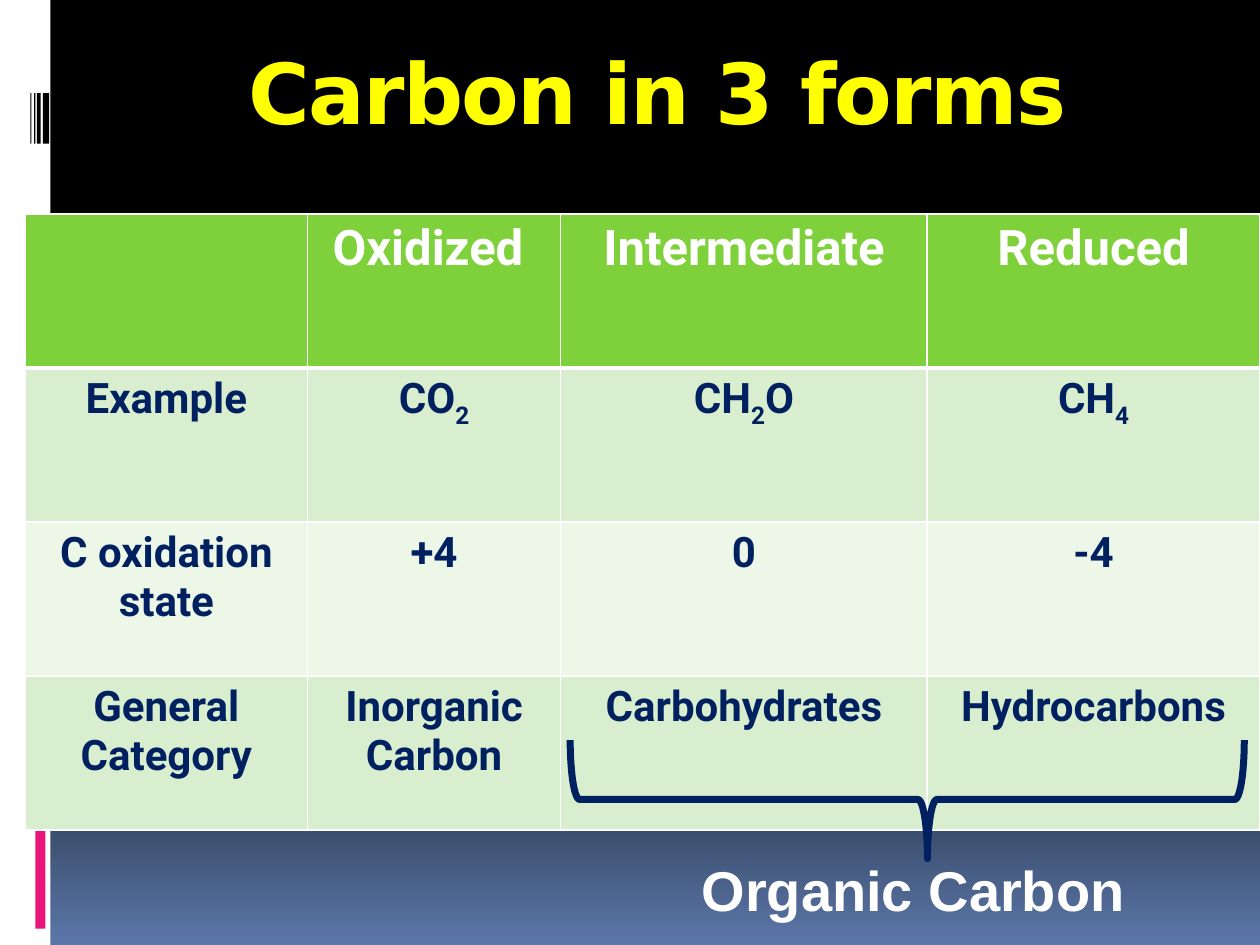
from copy import deepcopy

from lxml import etree
from pptx import Presentation
from pptx.dml.color import RGBColor
from pptx.enum.shapes import MSO_SHAPE
from pptx.enum.text import MSO_ANCHOR, PP_ALIGN
from pptx.oxml.ns import qn
from pptx.util import Pt

RECTANGLE = MSO_SHAPE.RECTANGLE
LEFT_BRACE = MSO_SHAPE.LEFT_BRACE
MIDDLE = MSO_ANCHOR.MIDDLE
CENTER = PP_ALIGN.CENTER
LEFT = PP_ALIGN.LEFT

WHITE = "FFFFFF"
BLACK = "000000"
NAVY = "002060"
PINK = "EA157A"
HEADER_GREEN = "7FD13B"
BAND_GREENS = ("ECF7E8", "D8EECE")

BACKGROUND_STOPS = ((0, BLACK), (0.65, BLACK), (1, "5B77A8"))
SIDE_BARS = (
    (0, 0, 28.8, 540, WHITE),
    (20.16, 397.44, 5.76, 133.2, PINK),
    (20.16, 378, 5.76, 18, "FEB80A"),
    (20.16, 365.04, 5.76, 10.8, "4E5B6F"),
    (20.16, 357.84, 5.76, 5.76, PINK),
    (24.48, 53.28, 3.6, 28.8, BLACK),
    (21.1, 53.28, 2.16, 28.8, BLACK),
    (19.5, 53.28, 0.72, 28.8, BLACK),
    (17.3, 53.28, 0.72, 28.8, BLACK),
)
COLUMN_WIDTHS = (161.3, 144.7, 209.5, 190.1)
ROW_HEIGHT = 88
CARBON_FORMS = (
    ("", "Oxidized ", "Intermediate", "Reduced"),
    ("Example", "CO_2", "CH_2_O", "CH_4"),
    ("C oxidation state", "+4", "0", "-4"),
    ("General Category", "Inorganic Carbon", "Carbohydrates", "Hydrocarbons"),
)


def color(value):
    return RGBColor.from_string(value)


def box(left, top, width, height):
    return Pt(left), Pt(top), Pt(width), Pt(height)


def write_text(text_frame, text, *, size, font, fill, align=CENTER, spacing=None):
    text_frame.word_wrap = True
    paragraph = text_frame.paragraphs[0]
    paragraph.alignment = align
    for index, part in enumerate(text.split("_")):
        run = paragraph.add_run()
        run.text = part
        run.font.size = Pt(size)
        run.font.name = font
        run.font.bold = True
        run.font.color.rgb = color(fill)
        properties = run.font._element
        if index % 2:
            properties.set("baseline", "-25000")
        if spacing is not None:
            properties.set("spc", str(spacing * 100))


def set_background(slide):
    fill = slide.background.fill
    fill.gradient()
    fill.gradient_angle = 270
    stop_list = slide.element.find(".//" + qn("a:gsLst"))
    stop_list.insert(1, deepcopy(stop_list[0]))
    for stop, (position, value) in zip(fill.gradient_stops, BACKGROUND_STOPS):
        stop.position = position
        stop.color.rgb = color(value)


def add_bar(slide, left, top, width, height, fill):
    shape = slide.shapes.add_shape(RECTANGLE, *box(left, top, width, height))
    shape.shadow.inherit = False
    shape.fill.solid()
    shape.fill.fore_color.rgb = color(fill)
    shape.line.fill.background()


def add_title(slide, text):
    title = slide.shapes.title
    title.left, title.top, title.width, title.height = box(69.84, 26.64, 612, 51.12)
    title.text_frame.vertical_anchor = MIDDLE
    write_text(title.text_frame, text, size=48, font="DejaVu Sans", fill="FFFF00", spacing=-1)


def set_borders(cell, bottom_width):
    properties = cell._tc.get_or_add_tcPr()
    for index, side in enumerate("LRTB"):
        width = bottom_width if side == "B" else 1
        line = etree.Element(qn(f"a:ln{side}"), w=str(Pt(width)))
        solid = etree.SubElement(line, qn("a:solidFill"))
        etree.SubElement(solid, qn("a:srgbClr"), val=WHITE)
        properties.insert(index, line)


def add_table(slide, rows):
    frame = slide.shapes.add_table(
        len(rows), len(COLUMN_WIDTHS),
        *box(14.4, 122.4, sum(COLUMN_WIDTHS), ROW_HEIGHT * len(rows)))
    table = frame.table
    for column, width in zip(table.columns, COLUMN_WIDTHS):
        column.width = Pt(width)
    for row_index, texts in enumerate(rows):
        is_header = row_index == 0
        table.rows[row_index].height = Pt(ROW_HEIGHT)
        for column_index, text in enumerate(texts):
            cell = table.cell(row_index, column_index)
            cell.fill.solid()
            cell.fill.fore_color.rgb = color(
                HEADER_GREEN if is_header else BAND_GREENS[row_index % 2])
            set_borders(cell, 3 if is_header else 1)
            if text:
                write_text(cell.text_frame, text, size=28 if is_header else 24,
                           font="Roboto", fill=WHITE if is_header else NAVY)


def add_brace(slide):
    brace = slide.shapes.add_shape(LEFT_BRACE, *box(484.56, 264.24, 67.68, 385.2))
    brace.rotation = 270
    brace.adjustments[0] = 0.08
    brace.adjustments[1] = 0.53
    brace.shadow.inherit = False
    brace.fill.background()
    brace.line.color.rgb = color(NAVY)
    brace.line.width = Pt(4)


def add_label(slide, text):
    label = slide.shapes.add_textbox(*box(393.84, 485.28, 303.84, 46.08))
    write_text(label.text_frame, text, size=32, font="Arial", fill=WHITE, align=LEFT)


def main():
    presentation = Presentation()
    presentation.slide_width, presentation.slide_height = Pt(720), Pt(540)
    slide = presentation.slides.add_slide(presentation.slide_layouts[5])
    set_background(slide)
    for bar in SIDE_BARS:
        add_bar(slide, *bar)
    add_title(slide, "Carbon in 3 forms")
    add_table(slide, CARBON_FORMS)
    add_brace(slide)
    add_label(slide, "Organic Carbon")
    presentation.save("out.pptx")


if __name__ == "__main__":
    main()
